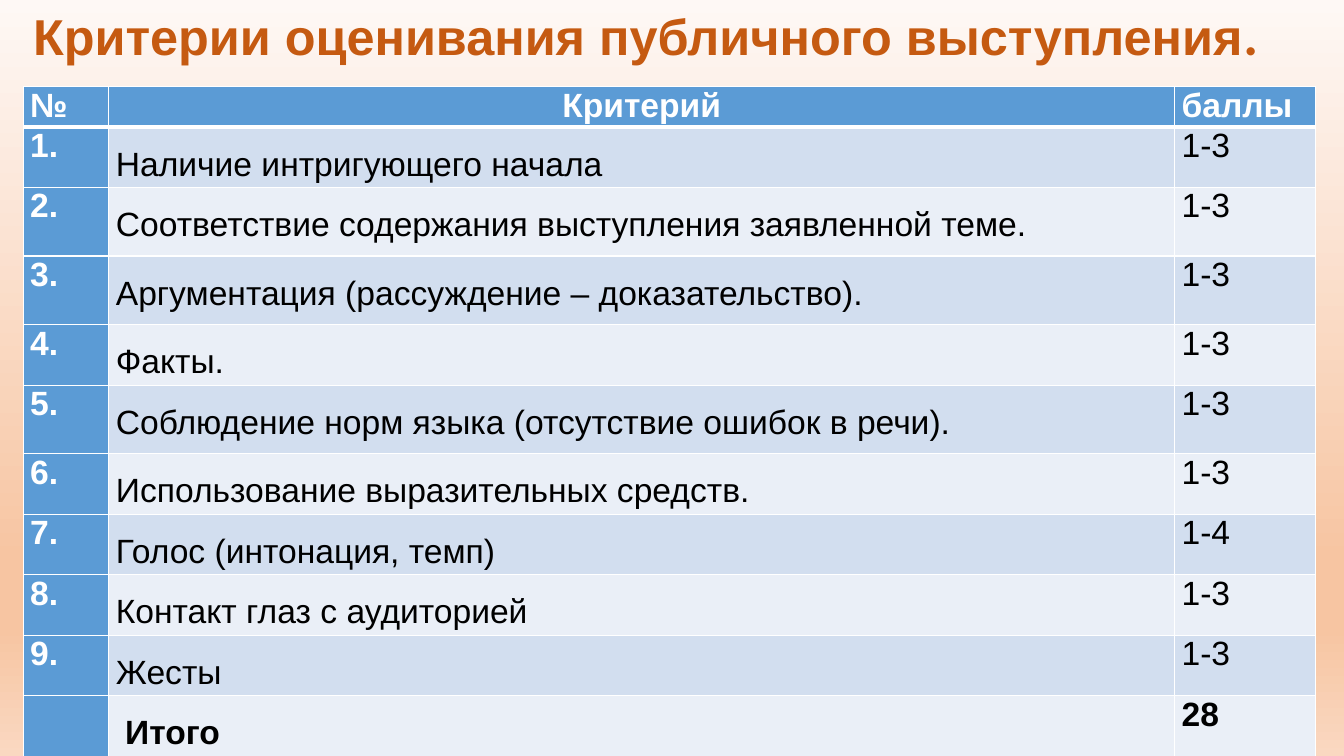
from lxml import etree
from pptx import Presentation, util as u
from pptx.dml.color import RGBColor
from pptx.enum import text
from pptx.oxml import ns

Inches = u.Inches


def rgb(value):
    return RGBColor.from_string(value)


def gradient_stop(parent, position, color):
    stop = etree.SubElement(parent, ns.qn("a:gs"), pos=str(position * 1000))
    etree.SubElement(stop, ns.qn("a:srgbClr"), val=color)


class CriteriaSlide:
    font = "Arial"
    accent = "5B9BD5"
    bands = ("D2DEEF", "EAEFF7")
    white = "FFFFFF"
    black = "000000"

    def __init__(self, slide):
        self.slide = slide

    def background(self, stops):
        fill = self.slide.background.fill
        fill.gradient()
        fill.gradient_angle = 270
        stop_list = self.slide.element.find(".//" + ns.qn("a:gsLst"))
        for stop in list(stop_list):
            stop_list.remove(stop)
        for position, color in stops:
            gradient_stop(stop_list, position, color)

    def run(self, paragraph, wording, size, color, bold, font=None):
        run = paragraph.add_run()
        run.text = wording
        run.font.name = font or self.font
        run.font.size = u.Pt(size)
        run.font.bold = bold
        run.font.color.rgb = rgb(color)

    def title(self, wording, ending, color):
        box = self.slide.shapes.add_textbox(Inches(0.23), Inches(0.18), Inches(12.9), Inches(0.39))
        frame = box.text_frame
        frame.word_wrap = True
        frame.vertical_anchor = text.MSO_ANCHOR.MIDDLE
        heading = frame.paragraphs[0]
        heading.line_spacing = 0.9
        self.run(heading, wording, 36, color, True)
        self.run(heading, ending, 39.6, color, True, "Calibri")

    def borders(self, cell, bottom):
        properties = cell._tc.get_or_add_tcPr()
        widths = (("lnL", 1), ("lnR", 1), ("lnT", 1), ("lnB", bottom))
        for index, (side, width) in enumerate(widths):
            line = etree.Element(ns.qn("a:" + side), w=str(u.Pt(width)))
            solid = etree.SubElement(line, ns.qn("a:solidFill"))
            etree.SubElement(solid, ns.qn("a:srgbClr"), val=self.white)
            properties.insert(index, line)

    def cell(self, cell, wording, fill, color, bold, spacing, align, bottom):
        cell.margin_left = cell.margin_right = Inches(0.07)
        cell.margin_top = cell.margin_bottom = 0
        cell.fill.solid()
        cell.fill.fore_color.rgb = rgb(fill)
        self.borders(cell, bottom)
        paragraph = cell.text_frame.paragraphs[0]
        paragraph.alignment = align
        paragraph.line_spacing = spacing
        if wording:
            self.run(paragraph, wording, 24, color, bold)

    def table(self, rows, widths, heights):
        frame = self.slide.shapes.add_table(
            len(rows), len(widths), Inches(0.23), Inches(0.86),
            Inches(sum(widths)), Inches(sum(heights)))
        table = frame.table
        table.horz_banding = False
        for column, width in zip(table.columns, widths):
            column.width = Inches(width)
        for row, height in zip(table.rows, heights):
            row.height = Inches(height)
        for r, row in enumerate(rows):
            header, total = r == 0, r == len(rows) - 1
            for c, wording in enumerate(row):
                strong = header or c == 0
                self.cell(
                    table.cell(r, c), wording,
                    fill=self.accent if strong else self.bands[(r - 1) % 2],
                    color=self.white if strong else self.black,
                    bold=strong or total,
                    spacing=1.5 if c == 1 and not header else 1.0,
                    align=text.PP_ALIGN.CENTER if header and c == 1 else text.PP_ALIGN.LEFT,
                    bottom=3 if header else 1)


def main():
    deck = Presentation()
    deck.slide_width = Inches(13.33)
    deck.slide_height = Inches(7.5)
    page = CriteriaSlide(deck.slides.add_slide(deck.slide_layouts[6]))
    page.background([(0, "FEF8F5"), (74, "F7C5A2"), (83, "F7C5A2"), (100, "FAD8C1")])
    page.title("Критерии оценивания публичного выступления", ".", "C55A11")

    criteria = [
        ("Наличие интригующего начала", "1-3"),
        ("Соответствие содержания выступления заявленной теме.", "1-3"),
        ("Аргументация (рассуждение – доказательство).", "1-3"),
        ("Факты.", "1-3"),
        ("Соблюдение норм языка (отсутствие ошибок в речи).", "1-3"),
        ("Использование выразительных средств.", "1-3"),
        ("Голос (интонация, темп)", "1-4"),
        ("Контакт глаз с аудиторией", "1-3"),
        ("Жесты", "1-3"),
    ]
    numbered = [(f"{n}.", name, points) for n, (name, points) in enumerate(criteria, 1)]
    rows = [("№", "Критерий", "баллы"), *numbered, ("", " Итого", "28")]
    tall_rows = (2, 3, 5)
    heights = [0.34] + [0.68 if r in tall_rows else 0.56 for r in range(1, len(rows))]
    page.table(rows, (0.85, 10.57, 1.4), heights)
    deck.save("out.pptx")


if __name__ == "__main__":
    main()
